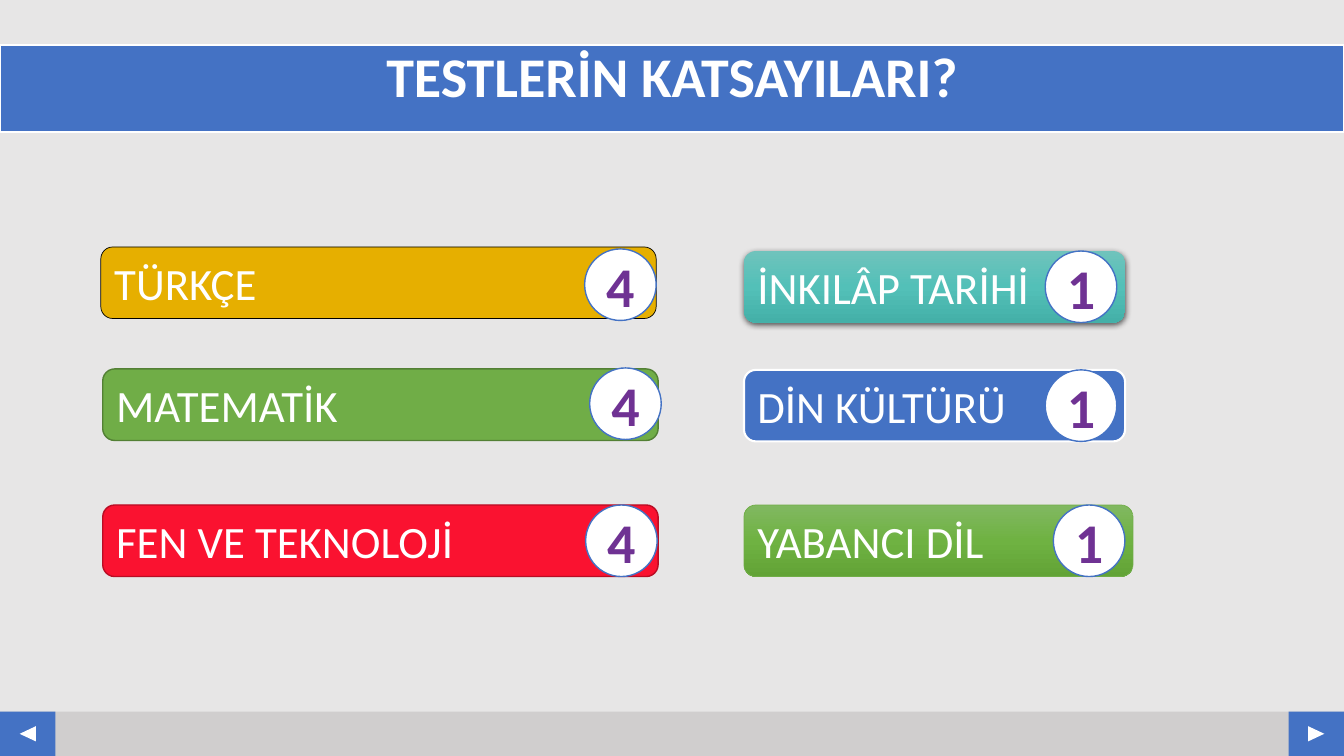
from pptx import Presentation
from pptx.dml.color import RGBColor
from pptx.enum import shapes, text
from pptx.oxml import parse_xml
from pptx.oxml.ns import nsdecls, qn
from pptx.util import Pt

COLORS = {
    "background": "E7E6E6", "footer": "D0CECE", "blue": "4472C4",
    "white": "FFFFFF", "black": "000000", "purple": "6F3293",
    "gold": "E6AF00", "green": "70AD47", "dark green": "538035",
    "red": "FA1230", "dark red": "B90D24",
}
TEAL_FADE = ["6FC3BC", "53C0B8", "44B0A8"]
GREEN_FADE = ["81B861", "6FB242", "62A336"]
KIND = shapes.MSO_SHAPE
WIDTH, HEIGHT = 960, 540


class SlideBuilder:
    font = "Calibri"

    def __init__(self, slide):
        self.slide = slide
        slide.background.fill.solid()
        slide.background.fill.fore_color.rgb = self.color("background")

    def color(self, name):
        return RGBColor.from_string(COLORS[name])

    def block(self, kind, left, top, width, height, fill, line=None, weight=1):
        block = self.slide.shapes.add_shape(kind, Pt(left), Pt(top), Pt(width), Pt(height))
        block.shadow.inherit = False
        if isinstance(fill, list):
            self.fade(block, fill)
        else:
            block.fill.solid()
            block.fill.fore_color.rgb = self.color(fill)
        if line:
            block.line.color.rgb = self.color(line)
            block.line.width = Pt(weight)
        else:
            block.line.fill.background()
        return block

    def fade(self, block, stops):
        """Vertical gradient with evenly spaced stops."""
        block.fill.gradient()
        block.fill.gradient_angle = 270
        stop_list = block._element.spPr.find(".//" + qn("a:gsLst"))
        for old_stop in list(stop_list):
            stop_list.remove(old_stop)
        for i, stop in enumerate(stops):
            position = 100000 * i // (len(stops) - 1)
            stop_list.append(parse_xml(
                f'<a:gs {nsdecls("a")} pos="{position}"><a:srgbClr val="{stop}"/></a:gs>'))

    def drop_shadow(self, block):
        effects = block._element.spPr.find(qn("a:effectLst"))
        effects.append(parse_xml(
            f'<a:outerShdw {nsdecls("a")} blurRad="{Pt(4.5)}" dist="{Pt(1.5)}" '
            f'dir="5400000" algn="ctr" rotWithShape="0"><a:srgbClr val="{COLORS["black"]}">'
            '<a:alpha val="63000"/></a:srgbClr></a:outerShdw>'))

    def label(self, block, words, size, color, bold=False,
              align=text.PP_ALIGN.CENTER, anchor=text.MSO_ANCHOR.MIDDLE):
        frame = block.text_frame
        frame.text = words
        frame.word_wrap = True
        frame.vertical_anchor = anchor
        paragraph = frame.paragraphs[0]
        paragraph.alignment = align
        font = paragraph.runs[0].font
        font.name, font.size, font.bold = self.font, Pt(size), bold
        font.color.rgb = self.color(color)
        return paragraph

    def title(self, words):
        banner = self.block(KIND.RECTANGLE, 0, 31.9, WIDTH, 62.4, "blue", "white", 1.5)
        paragraph = self.label(banner, words, 40, "white", True, anchor=text.MSO_ANCHOR.TOP)
        paragraph.line_spacing = 0.9

    def subject(self, name, left, top, width, fill, line, weight):
        bar = self.block(KIND.FLOWCHART_ALTERNATE_PROCESS, left, top, width, 51.1,
                         fill, line, weight)
        self.label(bar, name, 32, "white", align=text.PP_ALIGN.LEFT)
        return bar

    def coefficient(self, value, left, top):
        disc = self.block(KIND.OVAL, left, top, 51.1, 51.1, "white", "blue")
        self.label(disc, value, 40, "purple", True)

    def nav_button(self, left, rotation):
        self.block(KIND.RECTANGLE, left, 508.3, 39.6, 31.7, "blue")
        arrow = self.block(KIND.ISOSCELES_TRIANGLE, left + 14.4, 518.4, 10.8, 11.5, "white")
        arrow.rotation = rotation


def main():
    deck = Presentation()
    deck.slide_width, deck.slide_height = Pt(WIDTH), Pt(HEIGHT)
    page = SlideBuilder(deck.slides.add_slide(deck.slide_layouts[6]))

    # Footer with navigation buttons
    page.block(KIND.RECTANGLE, 0, 508.3, WIDTH, 31.7, "footer")
    page.nav_button(0, 270)
    page.nav_button(WIDTH - 39.6, 90)

    # Title banner
    page.title("TESTLERİN KATSAYILARI?")

    # Subjects: name, left, top, width, fill, line, line width
    subjects = [
        ("TÜRKÇE", 72, 176.4, 396.7, "gold", "black", 0.5),
        ("MATEMATİK", 73.4, 263.5, 396.7, "green", "dark green", 1),
        ("FEN VE TEKNOLOJİ", 73.4, 360.7, 396.7, "red", "dark red", 1),
        ("İNKILÂP TARİHİ", 531.4, 179.3, 272.2, TEAL_FADE, None, 0),
        ("DİN KÜLTÜRÜ", 531.4, 264.2, 272.2, "blue", "white", 1.5),
        ("YABANCI DİL", 531.4, 360.7, 277.9, GREEN_FADE, "green", 0.5),
    ]
    bars = {subject[0]: page.subject(*subject) for subject in subjects}
    page.drop_shadow(bars["İNKILÂP TARİHİ"])

    # Coefficients: value, left, top
    for value, left, top in [
        ("4", 417.6, 177.8), ("4", 421.2, 262.8), ("4", 418.3, 360.7),
        ("1", 746.6, 179.3), ("1", 746.6, 264.2), ("1", 752.4, 360.7),
    ]:
        page.coefficient(value, left, top)

    deck.save("out.pptx")


if __name__ == "__main__":
    main()
